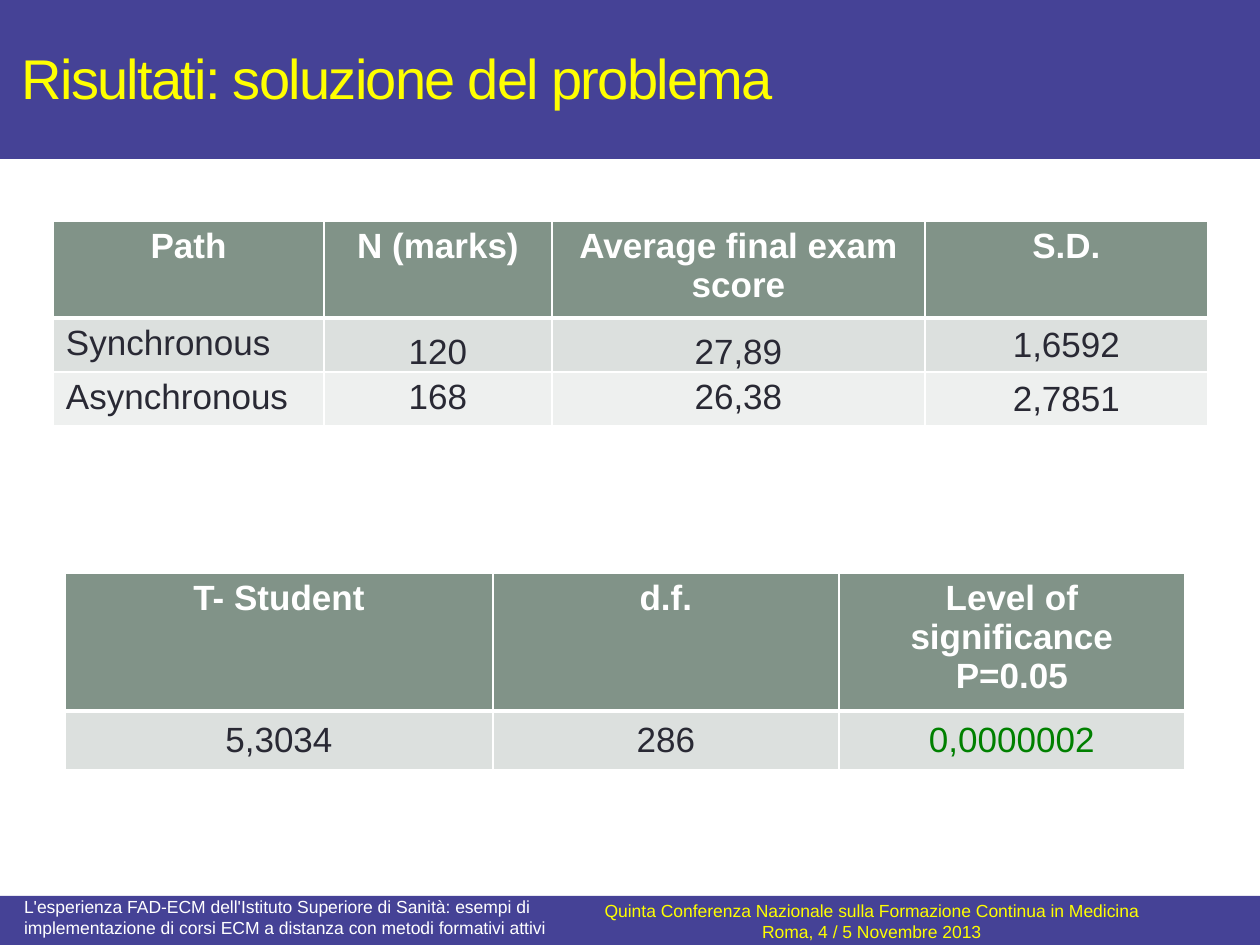
from dataclasses import dataclass

import pptx
import pptx.dml.color
import pptx.enum.shapes
import pptx.enum.text
import pptx.oxml
import pptx.oxml.ns
import pptx.util

RGBColor = pptx.dml.color.RGBColor
ALIGN = pptx.enum.text.PP_ALIGN
ANCHOR = pptx.enum.text.MSO_ANCHOR

INDIGO = RGBColor(0x45, 0x42, 0x96)
YELLOW = RGBColor(0xFF, 0xFF, 0x00)
WHITE = RGBColor(0xFF, 0xFF, 0xFF)
SAGE = RGBColor(0x81, 0x93, 0x88)
BAND_DARK = RGBColor(0xDC, 0xE0, 0xDE)
BAND_LIGHT = RGBColor(0xEE, 0xF0, 0xEF)
INK = RGBColor(0x29, 0x29, 0x34)
GREEN = RGBColor(0x00, 0x80, 0x00)

EMU_PER_PX = 914400 / 126
PADDED = (13, 6, 13, 6)
SNUG = (0, 0, 0, 0)


@dataclass(frozen=True)
class Box:
    left: int
    top: int
    width: int
    height: int

    def emu(self) -> tuple:
        return tuple(px(n) for n in (self.left, self.top, self.width, self.height))


@dataclass(frozen=True)
class Cell:
    text: str
    align: ALIGN = ALIGN.CENTER
    anchor: ANCHOR = ANCHOR.TOP
    margins: tuple = PADDED
    color: RGBColor = INK


@dataclass(frozen=True)
class Results:
    left: int
    top: int
    columns: tuple
    rows: tuple
    cells: tuple


def px(length: int) -> int:
    return round(length * EMU_PER_PX)


def apply(target, formats: dict) -> None:
    for name, value in formats.items():
        setattr(target, name, value)


def margin_formats(margins: tuple) -> dict:
    sides = ("left", "top", "right", "bottom")
    return {f"margin_{side}": px(n) for side, n in zip(sides, margins)}


def write(frame, text: str, size: int, color: RGBColor,
          align: ALIGN = ALIGN.LEFT, bold: bool = False) -> None:
    frame.text = text
    for paragraph in frame.paragraphs:
        paragraph.alignment = align
        for run in paragraph.runs:
            apply(run.font, {"name": "Arial", "size": pptx.util.Pt(size), "bold": bold})
            run.font.color.rgb = color


def draw_bar(slide, box: Box) -> None:
    bar = slide.shapes.add_shape(pptx.enum.shapes.MSO_SHAPE.RECTANGLE, *box.emu())
    bar.shadow.inherit = False
    bar.fill.solid()
    bar.fill.fore_color.rgb = INDIGO
    bar.line.fill.background()


def draw_note(slide, box: Box, text: str, color: RGBColor, align: ALIGN,
              anchor: ANCHOR, margins: tuple) -> None:
    frame = slide.shapes.add_textbox(*box.emu()).text_frame
    apply(frame, {"word_wrap": True, "vertical_anchor": anchor, **margin_formats(margins)})
    write(frame, text, 10, color, align)


def set_borders(cell, top: int, bottom: int) -> None:
    properties = cell._tc.get_or_add_tcPr()
    for side, points in {"L": 1, "R": 1, "T": top, "B": bottom}.items():
        properties.append(pptx.oxml.parse_xml(
            f'<a:ln{side} {pptx.oxml.ns.nsdecls("a")} w="{pptx.util.Pt(points)}">'
            f'<a:solidFill><a:srgbClr val="{WHITE}"/></a:solidFill></a:ln{side}>'))


def draw_results(slide, results: Results) -> None:
    box = Box(results.left, results.top, sum(results.columns), sum(results.rows))
    table = slide.shapes.add_table(
        len(results.rows), len(results.columns), *box.emu()).table
    for column, width in zip(table.columns, results.columns):
        column.width = px(width)
    for row, height in zip(table.rows, results.rows):
        row.height = px(height)

    for r, (contents, fill) in enumerate(
            zip(results.cells, (SAGE, BAND_DARK, BAND_LIGHT))):
        for c, content in enumerate(contents):
            cell = table.cell(r, c)
            # A thick rule separates the header from the first body row
            set_borders(cell, top=3 if r == 1 else 1, bottom=3 if r == 0 else 1)
            cell.fill.solid()
            cell.fill.fore_color.rgb = fill
            apply(cell, {"vertical_anchor": content.anchor,
                         **margin_formats(content.margins)})
            write(cell.text_frame, content.text, 20, content.color,
                  content.align, bold=r == 0)


def header(*labels: str) -> tuple:
    return tuple(Cell(label, color=WHITE) for label in labels)


SCORES = Results(53, 221, (271, 228, 373, 283), (97, 54, 54), (
    header("Path", "N (marks)", "Average final exam score", "S.D."),
    (Cell("Synchronous", ALIGN.LEFT),
     Cell("120", anchor=ANCHOR.BOTTOM, margins=SNUG),
     Cell("27,89", anchor=ANCHOR.BOTTOM, margins=SNUG),
     Cell("1,6592", anchor=ANCHOR.MIDDLE, margins=SNUG)),
    (Cell("Asynchronous", ALIGN.LEFT), Cell("168"), Cell("26,38"),
     Cell("2,7851", anchor=ANCHOR.MIDDLE, margins=SNUG)),
))

T_TEST = Results(65, 573, (428, 346, 346), (138, 59), (
    header("T- Student", "d.f.", "Level of significance P=0.05"),
    (Cell("5,3034", anchor=ANCHOR.MIDDLE, margins=SNUG),
     Cell("286", anchor=ANCHOR.MIDDLE),
     Cell("0,0000002", anchor=ANCHOR.MIDDLE, margins=SNUG, color=GREEN)),
))


def main() -> None:
    deck = pptx.Presentation()
    apply(deck, {"slide_width": px(1260), "slide_height": px(945)})
    slide = deck.slides.add_slide(deck.slide_layouts[5])

    # Header and footer bars
    draw_bar(slide, Box(0, 896, 1264, 50))
    draw_bar(slide, Box(-1, 0, 1264, 159))

    # Title, brought in front of the bars
    title = slide.shapes.title
    slide.shapes._spTree.append(title._element)
    apply(title, dict(zip(("left", "top", "width", "height"),
                          Box(9, 9, 945, 136).emu())))
    apply(title.text_frame, {"vertical_anchor": ANCHOR.MIDDLE, "word_wrap": True,
                             "auto_size": pptx.enum.text.MSO_AUTO_SIZE.NONE})
    write(title.text_frame, "Risultati: soluzione del problema", 32, YELLOW)
    title.text_frame.paragraphs[0].runs[0].font._element.set("spc", "-100")

    # Result tables
    for results in (SCORES, T_TEST):
        draw_results(slide, results)

    # Footer notes
    draw_note(slide, Box(586, 898, 571, 46),
              "Quinta Conferenza Nazionale sulla Formazione Continua in Medicina\n"
              "Roma, 4 / 5 Novembre 2013",
              YELLOW, ALIGN.CENTER, ANCHOR.MIDDLE, PADDED)
    draw_note(slide, Box(11, 896, 562, 49),
              "L'esperienza FAD-ECM dell'Istituto Superiore di Sanità: esempi di "
              "implementazione di corsi ECM a distanza con metodi formativi attivi",
              WHITE, ALIGN.LEFT, ANCHOR.TOP, (13, 0, 13, 6))

    deck.save("out.pptx")


if __name__ == "__main__":
    main()
